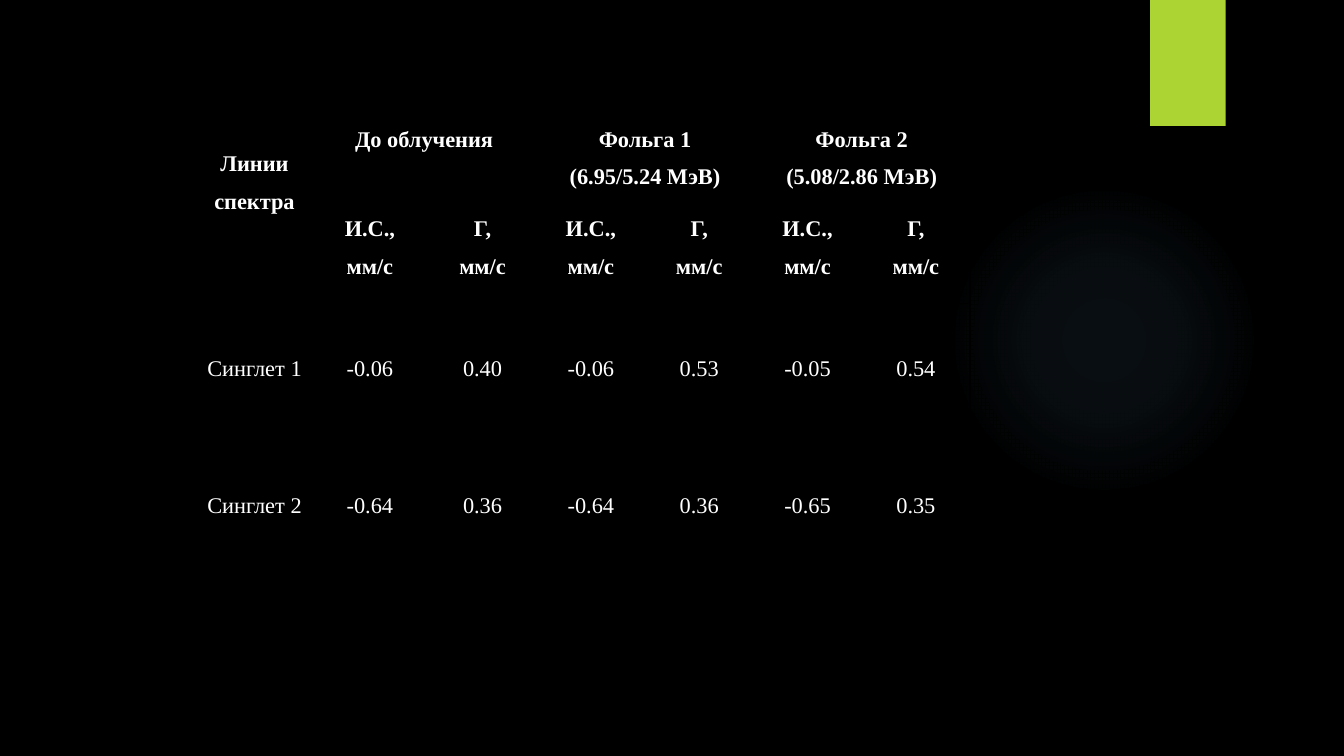
from lxml import etree
from pptx import Presentation
from pptx.dml.color import RGBColor
from pptx.enum.shapes import MSO_SHAPE
from pptx.enum.text import PP_ALIGN
from pptx.oxml import parse_xml
from pptx.util import Pt

OVAL, RECT = MSO_SHAPE.OVAL, MSO_SHAPE.RECTANGLE
CENTER = PP_ALIGN.CENTER
BLANK_LAYOUT = 6
NS = "http://schemas.openxmlformats.org/drawingml/2006/main"

BLACK, WHITE, LIME, SKY = "000000", "FFFFFF", "ACD433", "7AC4F0"
FONT = "Times New Roman"
LINE_WIDTHS = [81.4, 83.5] + [77.4] * 5
ROW_HEIGHTS = [64, 64, 98, 98]
GROUPS = [
    ["До облучения"],
    ["Фольга 1", "(6.95/5.24 МэВ)"],
    ["Фольга 2", "(5.08/2.86 МэВ)"],
]
QUANTITIES = ["И.С.,", "Г,"]
SINGLETS = [
    ["Синглет 1", "-0.06", "0.40", "-0.06", "0.53", "-0.05", "0.54"],
    ["Синглет 2", "-0.64", "0.36", "-0.64", "0.36", "-0.65", "0.35"],
]


def color(value):
    return RGBColor.from_string(value)


def add_plain(slide, kind, box):
    shape = slide.shapes.add_shape(kind, *(Pt(v) for v in box))
    shape.shadow.inherit = False
    shape.line.fill.background()
    return shape


def add_glow(slide, box):
    """Soft radial light that fades out towards its edge."""
    glow = add_plain(slide, OVAL, box)
    glow.fill.background()
    stops = "".join(
        f'<a:gs pos="{pos * 1000}"><a:srgbClr val="{SKY}">'
        f'<a:alpha val="{alpha * 1000}"/></a:srgbClr></a:gs>'
        for pos, alpha in [(0, 7), (36, 6), (69, 0)]
    )
    gradient = parse_xml(
        f'<a:gradFill xmlns:a="{NS}" rotWithShape="1"><a:gsLst>{stops}</a:gsLst>'
        '<a:path path="circle"><a:fillToRect l="50000" t="50000" r="50000" b="50000"/>'
        "</a:path></a:gradFill>"
    )
    properties = glow.element.spPr
    properties.replace(properties.find(f"{{{NS}}}noFill"), gradient)


def add_tab(slide, box):
    tab = add_plain(slide, RECT, box)
    tab.fill.solid()
    tab.fill.fore_color.rgb = color(LIME)


def style_cell(cell):
    cell.margin_left = cell.margin_right = Pt(5)
    cell.margin_top = cell.margin_bottom = 0
    properties = cell._tc.get_or_add_tcPr()
    for side in ("lnL", "lnR", "lnT", "lnB"):
        border = etree.SubElement(properties, f"{{{NS}}}{side}", w=str(Pt(1)))
        fill = etree.SubElement(border, f"{{{NS}}}solidFill")
        etree.SubElement(fill, f"{{{NS}}}srgbClr", val=BLACK)
    cell.fill.background()


def write_cell(cell, lines, bold=True, top=0):
    cell.margin_top = Pt(top)
    frame = cell.text_frame
    for index, line in enumerate(lines):
        paragraph = frame.add_paragraph() if index else frame.paragraphs[0]
        paragraph.alignment = CENTER
        paragraph.line_spacing = 1.5
        run = paragraph.add_run()
        run.text = line
        run.font.name = FONT
        run.font.size = Pt(16)
        run.font.bold = bold
        run.font.color.rgb = color(WHITE)


def add_spectrum_table(slide, left, top):
    size = (sum(LINE_WIDTHS), sum(ROW_HEIGHTS))
    frame = slide.shapes.add_table(
        len(ROW_HEIGHTS), len(LINE_WIDTHS), Pt(left), Pt(top), *(Pt(v) for v in size)
    )
    table = frame.table
    table.first_row = table.horz_banding = False
    for column, width in zip(table.columns, LINE_WIDTHS):
        column.width = Pt(width)
    for row, height in zip(table.rows, ROW_HEIGHTS):
        row.height = Pt(height)
        for cell in row.cells:
            style_cell(cell)

    # Two-level header
    table.cell(0, 0).merge(table.cell(1, 0))
    write_cell(table.cell(0, 0), ["Линии спектра"], top=17.5)
    for group, lines in enumerate(GROUPS):
        first = 1 + 2 * group
        table.cell(0, first).merge(table.cell(0, first + 1))
        write_cell(table.cell(0, first), lines)
        for offset, quantity in enumerate(QUANTITIES):
            write_cell(table.cell(1, first + offset), [quantity, "мм/с"])

    # Measured values
    for row, values in enumerate(SINGLETS, start=2):
        for column, value in enumerate(values):
            write_cell(table.cell(row, column), [value], bold=False, top=29)


def main():
    deck = Presentation()
    deck.slide_width, deck.slide_height = Pt(960), Pt(540)
    slide = deck.slides.add_slide(deck.slide_layouts[BLANK_LAYOUT])
    slide.background.fill.solid()
    slide.background.fill.fore_color.rgb = color(BLACK)
    add_glow(slide, (677.5, 131.8, 221.8, 221.8))
    add_tab(slide, (821.5, 0, 54, 90))
    add_spectrum_table(slide, 141.1, 82.1)
    deck.save("out.pptx")


if __name__ == "__main__":
    main()
